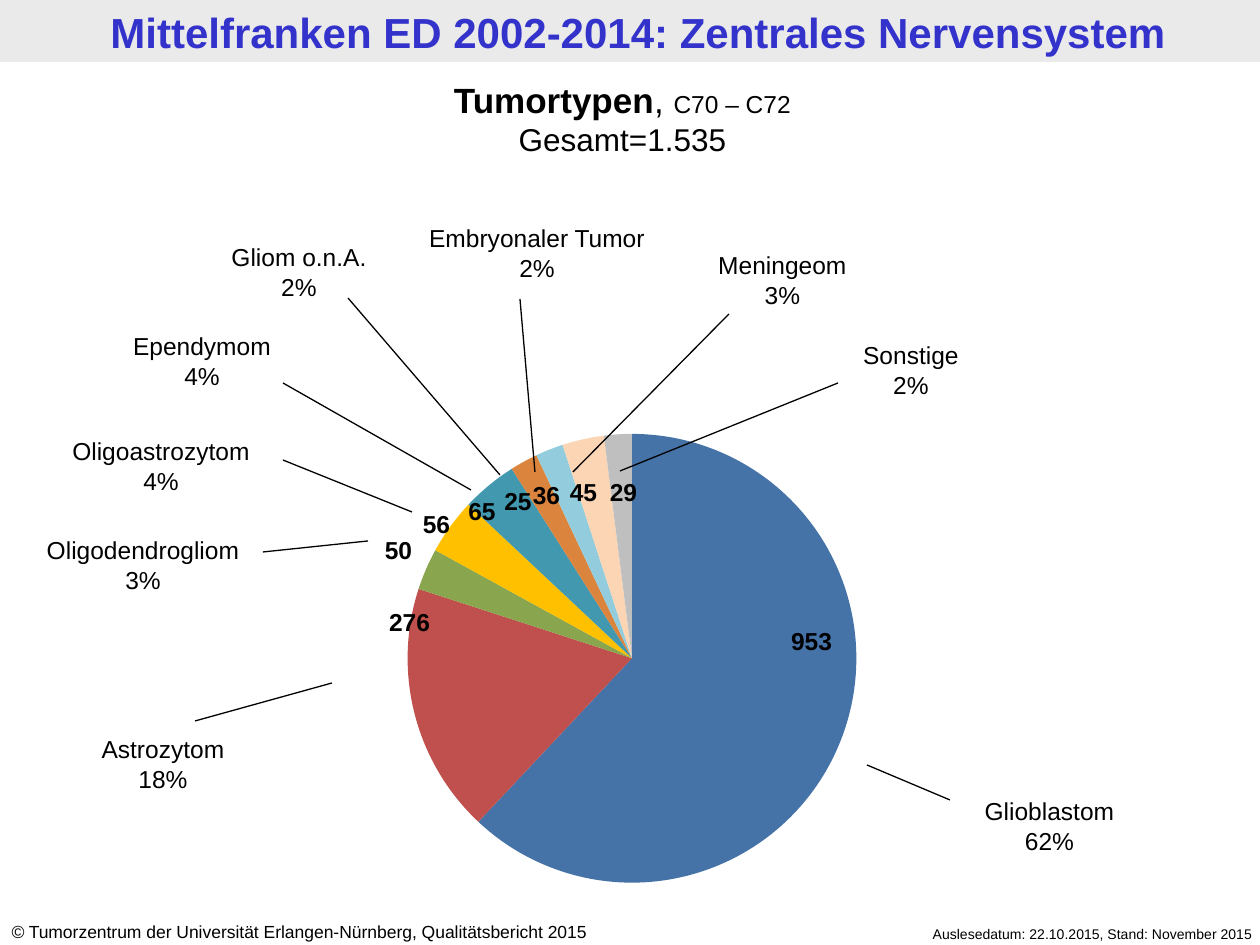
"""Build the slide with the pie chart of central nervous system tumour types."""
import pptx
import pptx.chart.data
import pptx.dml.color
import pptx.enum.chart
import pptx.enum.shapes
import pptx.enum.text
import pptx.util
import lxml.etree
from pptx.oxml.ns import qn

RGBColor = pptx.dml.color.RGBColor
BLACK = RGBColor(0x00, 0x00, 0x00)
TITLE_BLUE = RGBColor(0x33, 0x33, 0xCC)
BAND_GREY = RGBColor(0xEA, 0xEA, 0xEA)
SLICE_COLORS = [
    RGBColor(0x45, 0x72, 0xA7), RGBColor(0xC0, 0x50, 0x4D), RGBColor(0x89, 0xA5, 0x4E),
    RGBColor(0xFF, 0xC0, 0x00), RGBColor(0x41, 0x98, 0xAF), RGBColor(0xDB, 0x84, 0x3D),
    RGBColor(0x93, 0xCD, 0xDD), RGBColor(0xFC, 0xD5, 0xB5), RGBColor(0xBF, 0xBF, 0xBF),
]
SHARES = [62, 18, 3, 4, 4, 2, 2, 3, 2]
SCALE = 914400 / 126
CENTER = pptx.enum.text.PP_ALIGN.CENTER
LEFT = pptx.enum.text.PP_ALIGN.LEFT
RIGHT = pptx.enum.text.PP_ALIGN.RIGHT


def px(*lengths):
    return [pptx.util.Emu(round(length * SCALE)) for length in lengths]


def add_text(box, paragraphs, alignment=CENTER):
    shape = slide.shapes.add_textbox(*px(*box))
    frame = shape.text_frame
    frame.word_wrap = True
    for index, runs in enumerate(paragraphs):
        paragraph = frame.paragraphs[0] if index == 0 else frame.add_paragraph()
        paragraph.alignment = alignment
        paragraph.font.name = "Arial"
        paragraph.font.color.rgb = BLACK
        paragraph.font.size = pptx.util.Pt(runs[0][1])
        for text, size, bold, italic in runs:
            run = paragraph.add_run()
            run.text = text
            if size != runs[0][1]:
                run.font.size = pptx.util.Pt(size)
            if bold:
                run.font.bold = True
            if italic:
                run.font.italic = True


presentation = pptx.Presentation()
presentation.slide_width, presentation.slide_height = px(1260, 945)
slide = presentation.slides.add_slide(presentation.slide_layouts[5])

band = slide.shapes.add_shape(pptx.enum.shapes.MSO_SHAPE.RECTANGLE, *px(0, 0, 1260, 62))
band.shadow.inherit = False
band.fill.solid()
band.fill.fore_color.rgb = BAND_GREY
band.line.fill.background()

title = slide.shapes.title
slide.shapes._spTree.remove(title._element)
slide.shapes._spTree.append(title._element)
title.left, title.top, title.width, title.height = px(8, 1, 1260, 62)
title.text_frame.text = "Mittelfranken ED 2002-2014: Zentrales Nervensystem"
title.text_frame.margin_top, title.text_frame.margin_bottom = px(5, 5)
paragraph = title.text_frame.paragraphs[0]
paragraph.alignment = CENTER
paragraph.font.name = "Arial"
paragraph.font.size = pptx.util.Pt(24)
paragraph.font.bold = True
paragraph.font.color.rgb = TITLE_BLUE

add_text((838, 919, 427, 30),
         [[("Auslesedatum: 22.10.2015, Stand: November 2015", 8, False, False)]], RIGHT)
add_text((-1, 915, 660, 34),
         [[("©", 10, False, True),
           (" Tumorzentrum der Universität Erlangen-Nürnberg, Qualitätsbericht 2015",
            10, False, False)]], LEFT)
add_text((0, 72, 1245, 93),
         [[("Tumortypen", 20, True, False), (", ", 20, False, False),
           ("C70 – C72", 14, False, False)],
          [("Gesamt=1.535", 18, False, False)]])

chart_data = pptx.chart.data.CategoryChartData()
chart_data.categories = [str(number) for number in range(1, len(SHARES) + 1)]
chart_data.add_series("Series 1", SHARES)
chart = slide.shapes.add_chart(
    pptx.enum.chart.XL_CHART_TYPE.PIE, *px(302, 413, 660, 486), chart_data).chart
chart.has_legend = False
chart.has_title = False
chart.font.name = "Calibri"
chart.font.size = pptx.util.Pt(18)
chart.font.color.rgb = BLACK
pie = chart.plots[0]
pie.vary_by_categories = True
for index, color in enumerate(SLICE_COLORS):
    slice_format = pie.series[0].points[index].format
    slice_format.fill.solid()
    slice_format.fill.fore_color.rgb = color
    slice_format.line.fill.background()

plot_area = chart._chartSpace.chart.plotArea
for layout in plot_area.findall(qn("c:layout")):
    plot_area.remove(layout)
layout = lxml.etree.Element(qn("c:layout"))
manual_layout = lxml.etree.SubElement(layout, qn("c:manualLayout"))
for tag, value in [("layoutTarget", "inner"), ("xMode", "edge"), ("yMode", "edge"),
                   ("x", "0.16"), ("y", "0.04"), ("w", "0.68"), ("h", "0.93")]:
    lxml.etree.SubElement(manual_layout, qn(f"c:{tag}")).set("val", value)
plot_area.insert(0, layout)

counts = [
    ("276", 357, 601, 105), ("50", 346, 529, 105), ("953", 759, 620, 105),
    ("25", 485, 480, 66), ("56", 402, 503, 69), ("65", 451, 490, 62),
    ("36", 520, 474, 53), ("45", 557, 471, 53), ("29", 597, 471, 53),
]
for count, left, top, width in counts:
    add_text((left, top, width, 43), [[(count, 14, True, False)]])

tumor_types = [
    ("Astrozytom", "18%", 15, 728, 296), ("Sonstige", "2%", 805, 334, 212),
    ("Glioblastom", "62%", 917, 790, 265), ("Oligodendrogliom", "3%", 20, 529, 246),
    ("Gliom o.n.A.", "2%", 117, 236, 364), ("Ependymom", "4%", 79, 325, 246),
    ("Meningeom", "3%", 630, 244, 305), ("Embryonaler Tumor", "2%", 414, 217, 246),
    ("Oligoastrozytom", "4%", 38, 430, 246),
]
for name, share, left, top, width in tumor_types:
    add_text((left, top, width, 72),
             [[(name, 14, False, False)], [(share, 14, False, False)]])

leader_lines = [
    (332, 683, 195, 721), (368, 541, 263, 552), (412, 512, 283, 460),
    (471, 490, 283, 383), (500, 475, 348, 298), (573, 472, 729, 314),
    (535, 472, 520, 299), (867, 765, 950, 800), (620, 471, 838, 383),
]
for ends in leader_lines:
    line = slide.shapes.add_connector(pptx.enum.shapes.MSO_CONNECTOR.STRAIGHT, *px(*ends))
    line.line.color.rgb = BLACK
    line.line.width = pptx.util.Pt(0.75)
    lxml.etree.SubElement(line._element.spPr, qn("a:effectLst"))

presentation.save("out.pptx")
